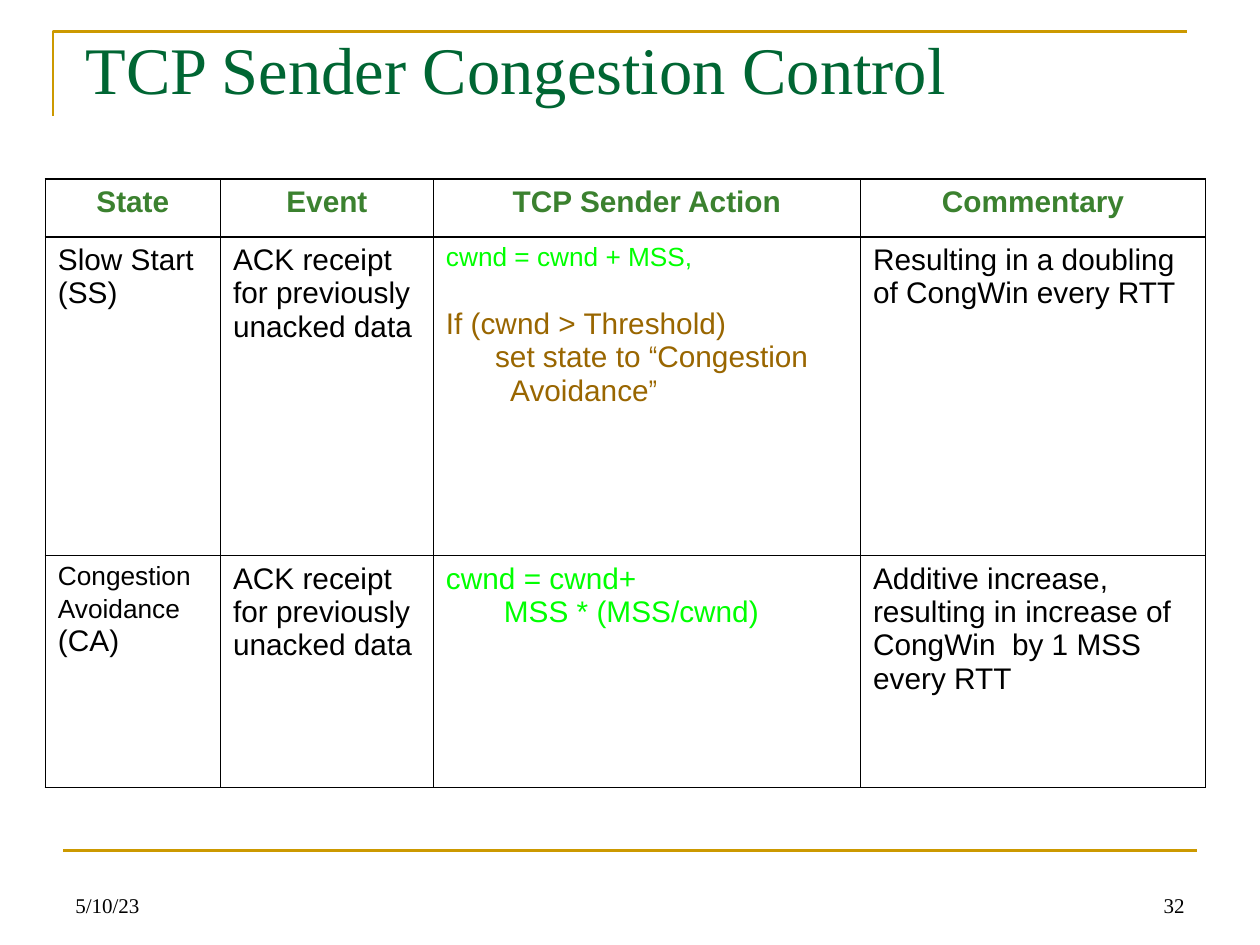
from typing import NamedTuple

from lxml.etree import SubElement
from pptx import Presentation
from pptx.dml.color import RGBColor
from pptx.enum.shapes import MSO_CONNECTOR
from pptx.enum.text import MSO_ANCHOR, PP_ALIGN
from pptx.oxml.ns import qn
from pptx.util import Inches, Pt

COLORS = {"gold": "CC9900", "title": "006633", "header": "3B812F",
          "black": "000000", "green": "00FF00", "brown": "996600"}
SERIF, SANS, NARROW = "Times New Roman", "Arial", "Arial Narrow"
COLUMNS = [1.39, 1.69, 3.39, 2.74]
ROWS = [0.46, 2.53, 1.84]


class Run(NamedTuple):
    text: str
    size: float = 17
    color: str = "black"
    font: str = SANS
    bold: bool = False


class Para(NamedTuple):
    runs: list[Run]
    align: PP_ALIGN = PP_ALIGN.LEFT
    before: float = 0
    left: float = 0
    hanging: float = 0


class Label(NamedTuple):
    left: float
    top: float
    width: float
    height: float
    anchor: MSO_ANCHOR
    para: Para


def rgb(name: str) -> RGBColor:
    return RGBColor.from_string(COLORS[name])


def header(text: str) -> list[Para]:
    return [Para([Run(text, color="header", bold=True)], PP_ALIGN.CENTER)]


def plain(text: str) -> list[Para]:
    return [Para([Run(text)])]


ACK = plain("ACK receipt for previously unacked data")
TABLE = [
    [header(t) for t in ("State", "Event", "TCP Sender Action", "Commentary")],
    [plain("Slow Start (SS)"),
     ACK,
     [Para([Run("cwnd = cwnd + MSS,", 15, "green")]),
      Para([Run("If (cwnd > Threshold)", color="brown")], before=20),
      Para([Run("set state to ", color="brown"),
            Run("“", color="brown", font=NARROW),
            Run("Congestion Avoidance", color="brown"),
            Run("”", color="brown", font=NARROW)], left=0.51, hanging=0.12)],
     plain("Resulting in a doubling of CongWin every RTT")],
    [[Para([Run("Congestion", 15)]),
      Para([Run("Avoidance", 15), Run(" (CA)")])],
     ACK,
     [Para([Run("cwnd = cwnd+", color="green")]),
      Para([Run("MSS * (MSS/cwnd)", color="green")], left=0.46)],
     plain("Additive increase, resulting in increase of CongWin  by 1 MSS every RTT")],
]
LABELS = [
    Label(0.58, 0, 8.85, 1.07, MSO_ANCHOR.MIDDLE,
          Para([Run("TCP Sender Congestion Control", 38, "title", SERIF)])),
    Label(0.5, 6.83, 2.33, 0.5, MSO_ANCHOR.BOTTOM,
          Para([Run("5/10/23", 12, font=SERIF)])),
    Label(7.17, 6.83, 2.33, 0.5, MSO_ANCHOR.BOTTOM,
          Para([Run("32", 12, font=SERIF)], PP_ALIGN.RIGHT)),
]


def write(tf, paras: list[Para]) -> None:
    tf.word_wrap = True
    for i, para in enumerate(paras):
        p = tf.add_paragraph() if i else tf.paragraphs[0]
        p.alignment = para.align
        p.space_before = Pt(para.before)
        if para.left:
            pPr = p._p.get_or_add_pPr()
            pPr.set("marL", str(Inches(para.left)))
            pPr.set("indent", str(-Inches(para.hanging)))
        for run in para.runs:
            r = p.add_run()
            r.text = run.text
            r.font.size, r.font.name, r.font.bold = Pt(run.size), run.font, run.bold
            r.font.color.rgb = rgb(run.color)


def draw_label(s, label: Label) -> None:
    box = s.shapes.add_textbox(Inches(label.left), Inches(label.top),
                               Inches(label.width), Inches(label.height))
    write(box.text_frame, [label.para])
    box.text_frame.vertical_anchor = label.anchor


def draw_rules(s) -> None:
    """Gold corner around the title and gold line above the footer."""
    builder = s.shapes.build_freeform(Inches(0.42), Inches(0.92))
    builder.add_line_segments([(Inches(0.42), Inches(0.25)),
                               (Inches(9.42), Inches(0.25))], close=False)
    corner = builder.convert_to_shape()
    corner.shadow.inherit = False
    corner.fill.background()
    rule = s.shapes.add_connector(MSO_CONNECTOR.STRAIGHT, Inches(0.5), Inches(6.75),
                                  Inches(9.5), Inches(6.75))
    SubElement(rule._element.spPr, qn("a:effectLst"))
    for sp in (corner, rule):
        sp.line.color.rgb = rgb("gold")
        sp.line.width = Pt(1.5)


def add_borders(cell) -> None:
    tcPr = cell._tc.get_or_add_tcPr()
    for side in ("lnL", "lnR", "lnT", "lnB"):
        ln = SubElement(tcPr, qn(f"a:{side}"), w=str(Pt(1)))
        fill = SubElement(ln, qn("a:solidFill"))
        SubElement(fill, qn("a:srgbClr"), val=COLORS["black"])


def draw_table(s) -> None:
    table = s.shapes.add_table(len(ROWS), len(COLUMNS), Inches(0.36), Inches(1.42),
                               Inches(sum(COLUMNS)), Inches(sum(ROWS))).table
    table.first_row = table.horz_banding = False
    for column, width in zip(table.columns, COLUMNS):
        column.width = Inches(width)
    for row, height, contents in zip(table.rows, ROWS, TABLE):
        row.height = Inches(height)
        for cell, paras in zip(row.cells, contents):
            add_borders(cell)
            cell.fill.background()
            write(cell.text_frame, paras)


def main() -> None:
    prs = Presentation()
    prs.slide_width, prs.slide_height = Inches(10), Inches(7.5)
    s = prs.slides.add_slide(prs.slide_layouts[6])
    draw_rules(s)
    draw_table(s)
    for label in LABELS:
        draw_label(s, label)
    prs.save("out.pptx")


if __name__ == "__main__":
    main()
